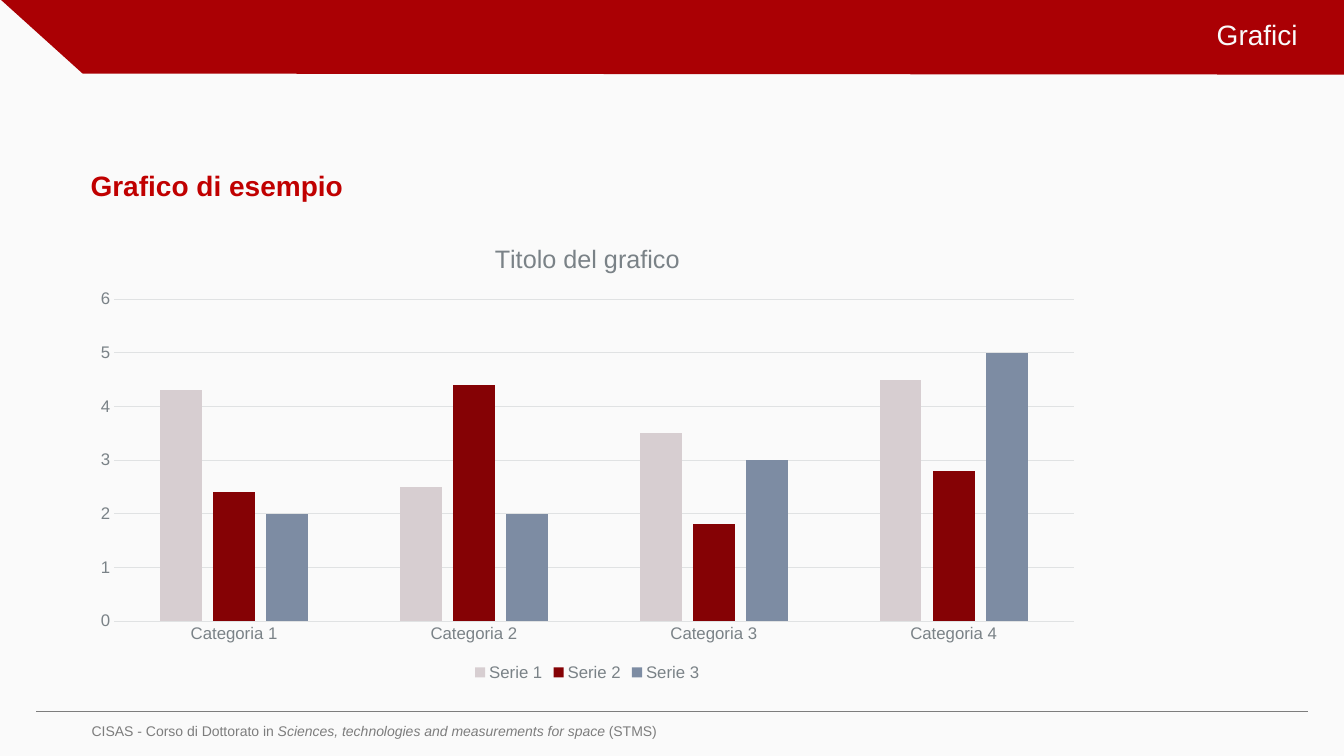
import pptx
import pptx.chart.data
import pptx.dml.color
import pptx.enum.chart
import pptx.enum.shapes
import pptx.enum.text
import pptx.oxml
import pptx.util
from pptx.util import Inches

RGBColor = pptx.dml.color.RGBColor
PAPER = RGBColor(0xFA, 0xFA, 0xFA)
BANNER_RED = RGBColor(0xAA, 0x00, 0x04)
HEADING_RED = RGBColor(0xC0, 0x00, 0x00)
FOOTER_GREY = RGBColor(0x7D, 0x7D, 0x7D)
CHART_GREY = RGBColor(0x7A, 0x82, 0x87)
GRID_GREY = RGBColor(0xE0, 0xE2, 0xE3)
FONT = "Arial"

CATEGORIES = [f"Categoria {number}" for number in range(1, 5)]
SERIES = [
    ("Serie 1", (4.3, 2.5, 3.5, 4.5), RGBColor(0xD7, 0xCE, 0xD1)),
    ("Serie 2", (2.4, 4.4, 1.8, 2.8), RGBColor(0x85, 0x02, 0x05)),
    ("Serie 3", (2, 2, 3, 5), RGBColor(0x7D, 0x8C, 0xA3)),
]


def style_font(font, size, color):
    font.name = FONT
    font.size = pptx.util.Pt(size)
    font.color.rgb = color


def add_text(page, place, spans, size, color, line_spacing):
    """Add a one-paragraph box; spans are (text, bold, italic)."""
    box = page.shapes.add_textbox(*map(Inches, place))
    box.text_frame.word_wrap = True
    para = box.text_frame.paragraphs[0]
    para.line_spacing = line_spacing
    for text, bold, italic in spans:
        span = para.add_run()
        span.text = text
        style_font(span.font, size, color)
        span.font.bold = bold
        span.font.italic = italic
    return box


deck = pptx.Presentation()
deck.slide_width = Inches(13.33)
deck.slide_height = Inches(7.5)
page = deck.slides.add_slide(deck.slide_layouts[6])
page.background.fill.solid()
page.background.fill.fore_color.rgb = PAPER

# Banner and footer rule
outline = page.shapes.build_freeform(Inches(0), Inches(-0.01), scale=1.0)
outline.add_line_segments(
    [(Inches(x), Inches(y)) for x, y in ((13.38, -0.01), (13.38, 0.74), (0.82, 0.73))]
)
banner = outline.convert_to_shape()
banner.shadow.inherit = False
banner.fill.solid()
banner.fill.fore_color.rgb = BANNER_RED
banner.line.fill.background()

footer_rule = page.shapes.add_connector(
    pptx.enum.shapes.MSO_CONNECTOR.STRAIGHT,
    Inches(0.36), Inches(7.06), Inches(12.97), Inches(7.06),
)
footer_rule.line.color.rgb = FOOTER_GREY
footer_rule.line.width = pptx.util.Pt(0.75)
footer_rule._element.spPr.append(pptx.oxml.parse_xml(
    '<a:effectLst xmlns:a="http://schemas.openxmlformats.org/drawingml/2006/main"/>'
))

# Title and heading
title = add_text(page, (5.12, 0, 7.85, 0.73), [("Grafici", False, False)], 20, PAPER, 0.9)
title.text_frame.vertical_anchor = pptx.enum.text.MSO_ANCHOR.MIDDLE
title.text_frame.paragraphs[0].alignment = pptx.enum.text.PP_ALIGN.RIGHT
add_text(page, (0.8, 1.56, 11.73, 0.91), [("Grafico di esempio", True, False)],
         20, HEADING_RED, 1.2)

# Chart
data = pptx.chart.data.CategoryChartData()
data.categories = CATEGORIES
for name, values, color in SERIES:
    data.add_series(name, values)
chart = page.shapes.add_chart(
    pptx.enum.chart.XL_CHART_TYPE.COLUMN_CLUSTERED,
    Inches(0.8), Inches(2.21), Inches(10.05), Inches(4.59), data,
).chart
style_font(chart.font, 12, CHART_GREY)

chart.has_title = True
heading = chart.chart_title.text_frame.paragraphs[0].add_run()
heading.text = "Titolo del grafico"
style_font(heading.font, 18, CHART_GREY)
heading.font.bold = False
chart.chart_title.include_in_layout = False

chart.has_legend = True
chart.legend.position = pptx.enum.chart.XL_LEGEND_POSITION.BOTTOM
chart.legend.include_in_layout = False
style_font(chart.legend.font, 12, CHART_GREY)

plot = chart.plots[0]
plot.gap_width = 219
plot.overlap = -27
plot.vary_by_categories = False
for bars, (name, values, color) in zip(plot.series, SERIES):
    bars.format.fill.solid()
    bars.format.fill.fore_color.rgb = color

for axis in (chart.category_axis, chart.value_axis):
    axis.major_tick_mark = pptx.enum.chart.XL_TICK_MARK.NONE
    axis.minor_tick_mark = pptx.enum.chart.XL_TICK_MARK.NONE
    style_font(axis.tick_labels.font, 12, CHART_GREY)
chart.value_axis.format.line.fill.background()
chart.value_axis.has_major_gridlines = True
for line in (chart.category_axis.format.line, chart.value_axis.major_gridlines.format.line):
    line.color.rgb = GRID_GREY
    line.width = pptx.util.Pt(0.75)

# Footer
footer = add_text(page, (0, 7.09, 12.53, 0.41), [
    ("CISAS - Corso di Dottorato in ", False, False),
    ("Sciences, technologies and measurements for space ", False, True),
    ("(STMS)", False, False),
], 10, FOOTER_GREY, 1.2)
footer.text_frame.margin_left = Inches(0.91)

deck.save("out.pptx")
